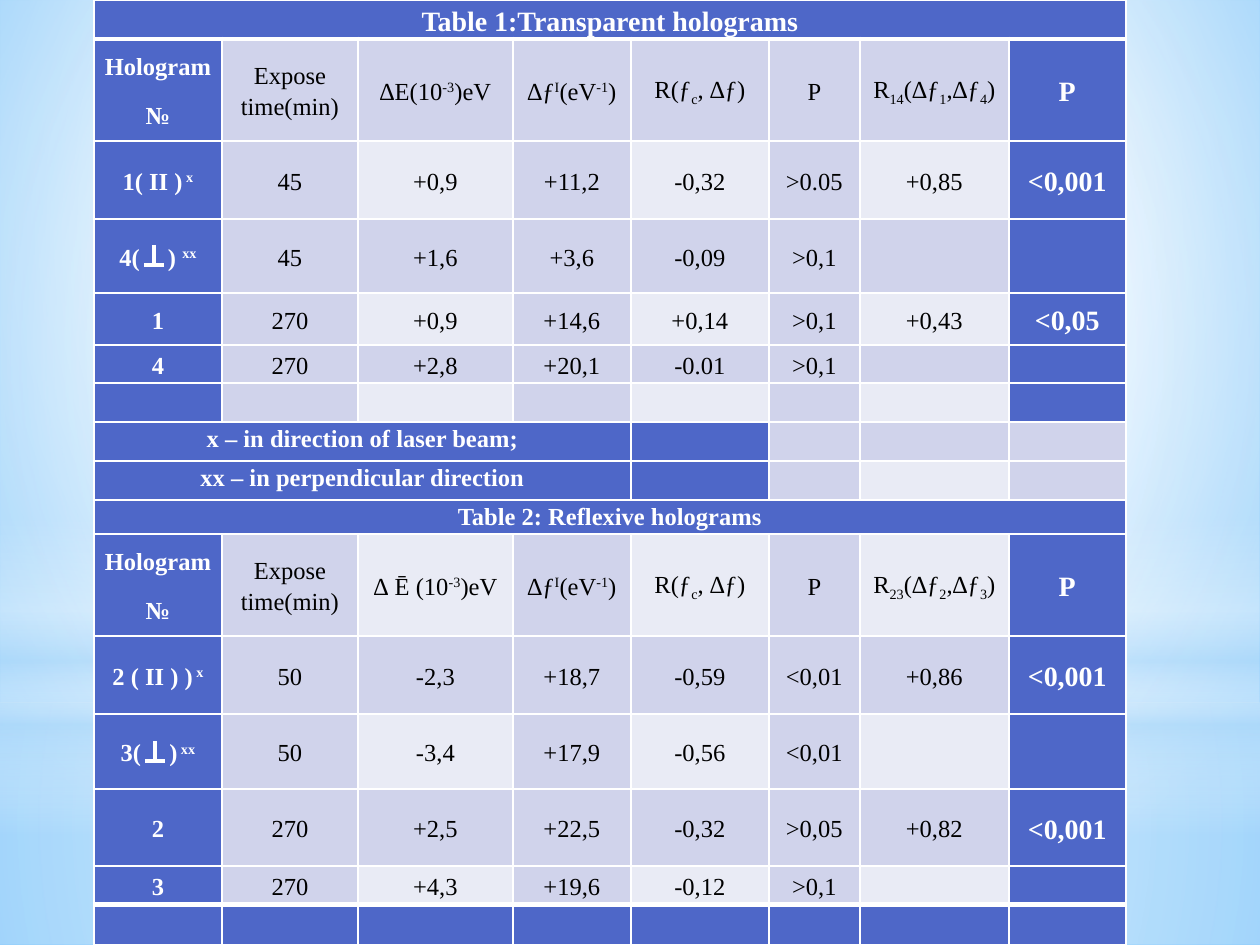
"""Build a slide with two tables of hologram measurements in one grid."""
import dataclasses
import itertools
from typing import NamedTuple

import lxml.etree
import pptx
import pptx.dml.color
import pptx.enum.shapes
import pptx.enum.text
import pptx.oxml
import pptx.oxml.ns
import pptx.util


@dataclasses.dataclass(frozen=True)
class Theme:
    font: str = "Times New Roman"
    blue: str = "4E67C8"
    band: str = "D0D3EB"
    pale: str = "E9EBF5"
    white: str = "FFFFFF"
    black: str = "000000"
    glow: str = "B4DCFA"
    sky: str = "9ED5FF"
    deep_sky: str = "5BB9FF"
    body: int = 14
    large: int = 16
    border: int = 1
    heavy_border: int = 3
    mark: float = 2.25


class Stop(NamedTuple):
    position: int
    color: str
    opacity: int = 100


class Glow(NamedTuple):
    preset: pptx.enum.shapes.MSO_SHAPE
    top: int
    height: int
    stops: list[Stop]
    center: tuple[int, ...] | None = (50, 50, 50, 50)


class Row(NamedTuple):
    height: int
    texts: list[str]
    span: int = 1


THEME = Theme()
SHAPES = pptx.enum.shapes.MSO_SHAPE
EMU_PER_PX = 914400 / 126
WIDTH, HEIGHT = 1260, 945
TABLE_LEFT = 94
COLUMNS = [128, 136, 155, 118, 138, 91, 149, 117]
BASELINES = {"^": "30000", "_": "-25000"}
GAP = "~"
SKY = [Stop(0, THEME.sky), Stop(60, THEME.white), Stop(100, THEME.deep_sky)]
GLOWS = [
    Glow(SHAPES.RECTANGLE, 703, 242,
         [Stop(0, THEME.white, 91), Stop(37, THEME.white, 76), Stop(100, THEME.glow, 79)]),
    Glow(SHAPES.RECTANGLE, 0, 703,
         [Stop(0, THEME.white, 89), Stop(48, THEME.white, 62), Stop(100, THEME.glow, 79)]),
    Glow(SHAPES.RECTANGLE, 519, 315,
         [Stop(0, THEME.white, 0), Stop(29, THEME.white, 30), Stop(45, THEME.glow, 40),
          Stop(55, THEME.white, 26), Stop(65, THEME.glow, 60), Stop(100, THEME.white, 0)], None),
    Glow(SHAPES.OVAL, 220, 703, [Stop(0, THEME.white), Stop(56, THEME.white, 0)]),
]


def header(energy: str, correlation: str) -> list[str]:
    return ["Hologram\n№", "Expose time(min)", energy, "∆ƒ|^I|(eV|^-1|)",
            "R(ƒ|_c|, ∆ƒ)", "P", correlation, "P"]


ROWS = [
    Row(39, ["Table 1:Transparent holograms"], 8),
    Row(102, header("∆E(10|^-3|)eV", "R|_14|(∆ƒ|_1|,∆ƒ|_4|)")),
    Row(78, ["1( II )|^ x", "45", "+0,9", "+11,2", "-0,32", ">0.05", "+0,85", "<0,001"]),
    Row(74, ["4(|~|) |^xx", "45", "+1,6", "+3,6", "-0,09", ">0,1", "", ""]),
    Row(52, ["1", "270", "+0,9", "+14,6", "+0,14", ">0,1", "+0,43", "<0,05"]),
    Row(38, ["4", "270", "+2,8", "+20,1", "-0.01", ">0,1", "", ""]),
    Row(39, []),
    Row(39, ["x – in direction of laser beam;"], 4),
    Row(39, ["xx – in perpendicular direction"], 4),
    Row(34, ["Table 2: Reflexive holograms"], 8),
    Row(102, header("∆ Ē (10|^-3|)eV", "R|_23|(∆ƒ|_2|,∆ƒ|_3|)")),
    Row(78, ["2 ( II ) )|^ x", "50", "-2,3", "+18,7", "-0,59", "<0,01", "+0,86", "<0,001"]),
    Row(75, ["3(|~|)|^ xx", "50", "-3,4", "+17,9", "-0,56", "<0,01", "", ""]),
    Row(77, ["2", "270", "+2,5", "+22,5", "-0,32", ">0,05", "+0,82", "<0,001"]),
    Row(39, ["3", "270", "+4,3", "+19,6", "-0,12", ">0,1", "", ""]),
    Row(40, []),
]
LAST_ROW, LAST_COLUMN = len(ROWS) - 1, len(COLUMNS) - 1


def px(length: int) -> pptx.util.Emu:
    return pptx.util.Emu(round(length * EMU_PER_PX))


def rgb(color: str) -> pptx.dml.color.RGBColor:
    return pptx.dml.color.RGBColor.from_string(color)


def gradient(stops: list[Stop], center: tuple[int, ...] | None) -> lxml.etree._Element:
    marks = "".join(
        f'<a:gs pos="{stop.position * 1000}"><a:srgbClr val="{stop.color}">'
        f'<a:alpha val="{stop.opacity * 1000}"/></a:srgbClr></a:gs>' for stop in stops)
    direction = '<a:lin ang="5400000" scaled="0"/>'
    if center:
        sides = " ".join(f'{side}="{share * 1000}"' for side, share in zip("ltrb", center))
        direction = f'<a:path path="circle"><a:fillToRect {sides}/></a:path>'
    return pptx.oxml.parse_xml(
        f'<a:gradFill {pptx.oxml.ns.nsdecls("a")} rotWithShape="1">'
        f'<a:gsLst>{marks}</a:gsLst>{direction}</a:gradFill>')


def replace_gradient(fill, holder, stops: list[Stop], center: tuple[int, ...] | None) -> None:
    fill.gradient()
    plain = holder.find(".//" + pptx.oxml.ns.qn("a:gradFill"))
    plain.getparent().replace(plain, gradient(stops, center))


def draw_glow(slide, glow: Glow) -> None:
    light = slide.shapes.add_shape(glow.preset, 0, px(glow.top), px(WIDTH), px(glow.height))
    light.shadow.inherit = False
    light.line.fill.background()
    replace_gradient(light.fill, light._element.spPr, glow.stops, glow.center)


def cell_fill(row: int, column: int) -> str:
    footnote = ROWS[row].span == 4
    if row == LAST_ROW or ROWS[row].span == 8 or column == 0 or (footnote and column <= 4):
        return THEME.blue
    if column == LAST_COLUMN:
        return THEME.band if footnote else THEME.blue
    return THEME.pale if row % 2 == 0 and column % 2 == 0 else THEME.band


def set_borders(cell, row: int) -> None:
    heavy = {"T": row in (1, LAST_ROW), "B": row in (0, LAST_ROW - 1)}
    for side in "LRTB":
        points = THEME.heavy_border if heavy.get(side) else THEME.border
        cell._tc.get_or_add_tcPr().append(pptx.oxml.parse_xml(
            f'<a:ln{side} {pptx.oxml.ns.nsdecls("a")} w="{pptx.util.Pt(points)}"><a:solidFill>'
            f'<a:srgbClr val="{THEME.white}"/></a:solidFill></a:ln{side}>'))


def add_segment(paragraph, segment: str) -> None:
    run = paragraph.add_run()
    kind = segment[:1]
    run.text = " " if kind == GAP else segment[1:] if kind in BASELINES else segment
    if kind == GAP:
        run._r.get_or_add_rPr().set("spc", "1250")
    elif kind in BASELINES:
        run._r.get_or_add_rPr().set("baseline", BASELINES[kind])


def fill_cell(cell, row: int, column: int, text: str) -> None:
    set_borders(cell, row)
    color = cell_fill(row, column)
    cell.fill.solid()
    cell.fill.fore_color.rgb = rgb(color)
    cell.margin_left = cell.margin_right = px(9)
    cell.margin_top = cell.margin_bottom = 0
    anchors = pptx.enum.text.MSO_ANCHOR
    cell.vertical_anchor = anchors.TOP if row in (7, 8, 9) else anchors.MIDDLE
    on_blue = color == THEME.blue
    for index, line in enumerate(text.split("\n")):
        paragraph = cell.text_frame.add_paragraph() if index else cell.text_frame.paragraphs[0]
        paragraph.alignment = pptx.enum.text.PP_ALIGN.CENTER
        paragraph.line_spacing = 1.15
        paragraph.space_after = pptx.util.Pt(10)
        paragraph.font.name = THEME.font
        paragraph.font.size = pptx.util.Pt(
            THEME.large if row == 0 or column == LAST_COLUMN else THEME.body)
        paragraph.font.bold = on_blue
        paragraph.font.color.rgb = rgb(THEME.white if on_blue else THEME.black)
        for segment in filter(None, line.split("|")):
            add_segment(paragraph, segment)


def draw_table(slide) -> None:
    grid = slide.shapes.add_table(
        len(ROWS), len(COLUMNS), px(TABLE_LEFT), 0, px(sum(COLUMNS)), px(HEIGHT)).table
    for column, width in zip(grid.columns, COLUMNS):
        column.width = px(width)
    for number, row in enumerate(ROWS):
        grid.rows[number].height = px(row.height)
        if row.span > 1:
            grid.cell(number, 0).merge(grid.cell(number, row.span - 1))
        texts = itertools.chain(row.texts, itertools.repeat(""))
        for column, text in zip(range(len(COLUMNS)), texts):
            fill_cell(grid.cell(number, column), number, column, text)


def draw_perpendicular(slide, x: int, base: int) -> None:
    sign = slide.shapes.add_group_shape()
    for start, end in (((x, base - 20), (x, base)), ((x - 10, base), (x + 10, base))):
        stroke = sign.shapes.add_connector(
            pptx.enum.shapes.MSO_CONNECTOR.STRAIGHT, *map(px, start + end))
        stroke.line.color.rgb = rgb(THEME.white)
        stroke.line.width = pptx.util.Pt(THEME.mark)
        lxml.etree.SubElement(stroke._element.spPr, pptx.oxml.ns.qn("a:effectLst"))


def main() -> None:
    deck = pptx.Presentation()
    deck.slide_width, deck.slide_height = px(WIDTH), px(HEIGHT)
    slide = deck.slides.add_slide(deck.slide_layouts[6])
    replace_gradient(slide.background.fill, slide._element, SKY, (20, 10, 20, 60))
    for glow in GLOWS:
        draw_glow(slide, glow)
    draw_table(slide)
    draw_perpendicular(slide, 154, 265)
    draw_perpendicular(slide, 155, 761)
    deck.save("out.pptx")


if __name__ == "__main__":
    main()
